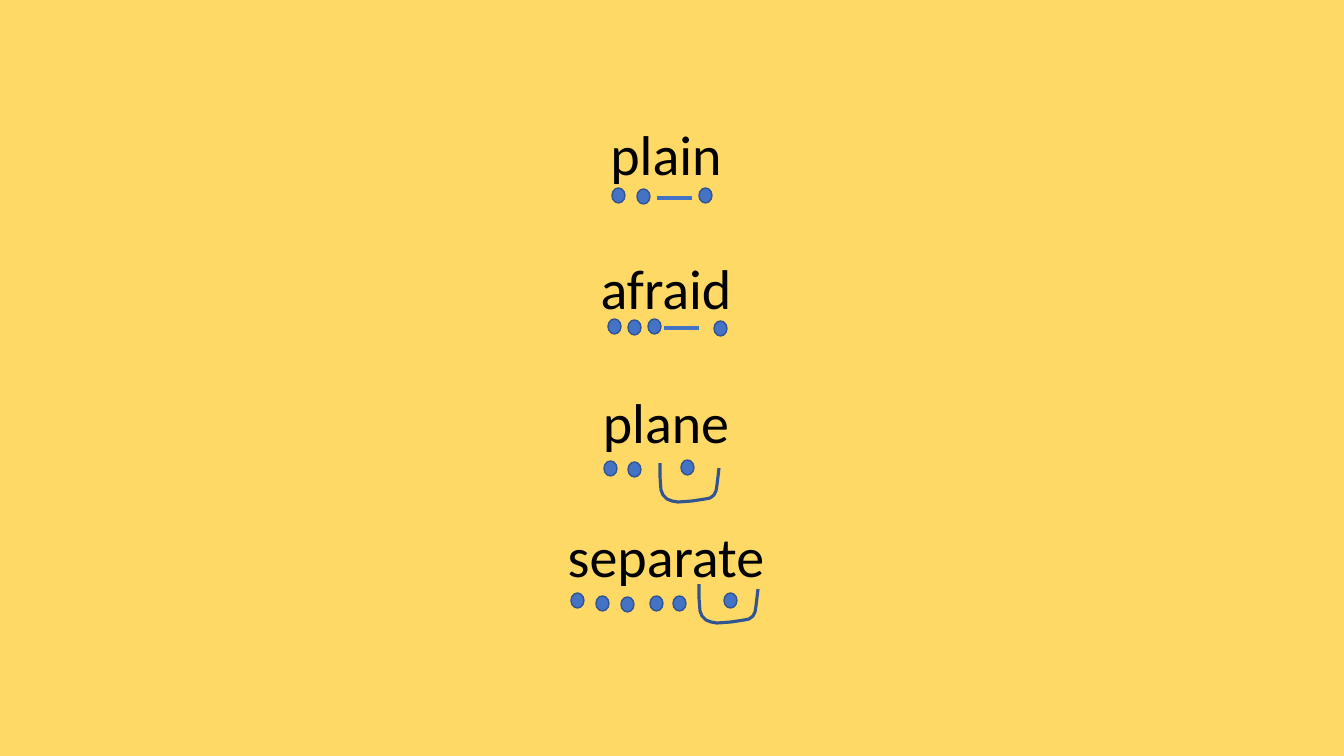
from pptx import Presentation
from pptx.dml.color import RGBColor
from pptx.enum.shapes import MSO_CONNECTOR as CONN, MSO_SHAPE as SHAPE
from pptx.enum.text import MSO_AUTO_SIZE as AUTO, PP_ALIGN as ALIGN
from pptx.oxml.ns import qn
from pptx.util import Pt
from lxml import etree

COLORS = {"background": "FFD966", "text": "000000", "dot": "4472C4", "edge": "325491"}
FONT = "Calibri"
EMU_PER_PX = 12192000 / 1344
SLIDE_SIZE = (1344, 756)
WORD_BOX = (330, 115, 672, 485)
DOT_SIZE = (13, 15)
DASH_LENGTH = 35
LOOP_CURVE = [(0, 14), (1, 27), (3, 32), (7, 36), (12, 38), (18, 39),
              (32, 38), (45, 36), (50, 35), (54, 32), (56, 28), (57, 22), (59, 5)]

WORDS = [
    {"word": "plain", "dots": [(612, 188), (637, 189), (699, 188)], "dash": (657, 198)},
    {"word": "afraid", "dots": [(608, 319), (628, 320), (648, 319), (714, 321)],
     "dash": (664, 328)},
    {"word": "plane", "dots": [(604, 461), (628, 462), (681, 460)], "loop": (660, 463)},
    {"word": "separate", "dots": [(571, 593), (596, 596), (621, 597), (650, 596),
                                  (673, 596), (724, 593)], "loop": (699, 584)},
]


def px(*lengths):
    return [round(n * EMU_PER_PX) for n in lengths]


def rgb(name):
    return RGBColor.from_string(COLORS[name])


def set_line(sp, color, width):
    sp.line.color.rgb = rgb(color)
    sp.line.width = Pt(width)


def add_words(s):
    tf = s.shapes.add_textbox(*px(*WORD_BOX)).text_frame
    tf.word_wrap = True
    tf.auto_size = AUTO.SHAPE_TO_FIT_TEXT
    tf.text = "\n".join(row["word"] for row in WORDS)
    for p in tf.paragraphs:
        p.alignment = ALIGN.CENTER
        p.space_after = Pt(47.5)
        font = p.runs[0].font
        font.name, font.size = FONT, Pt(40)
        font.color.rgb = rgb("text")
    tf.paragraphs[-1].space_after = Pt(0)


def add_dot(s, x, y):
    sp = s.shapes.add_shape(SHAPE.OVAL, *px(x, y, *DOT_SIZE))
    sp.shadow.inherit = False
    sp.fill.solid()
    sp.fill.fore_color.rgb = rgb("dot")
    set_line(sp, "edge", 1)


def add_dash(s, x, y):
    line = s.shapes.add_connector(CONN.STRAIGHT, *px(x, y, x + DASH_LENGTH, y))
    set_line(line, "dot", 2.25)
    etree.SubElement(line._element.spPr, qn("a:effectLst"))


def add_loop(s, x, y):
    builder = s.shapes.build_freeform(*px(x, y))
    builder.add_line_segments([px(x + dx, y + dy) for dx, dy in LOOP_CURVE], close=False)
    sp = builder.convert_to_shape()
    sp.shadow.inherit = False
    sp.fill.background()
    set_line(sp, "edge", 2.25)


def main():
    prs = Presentation()
    prs.slide_width, prs.slide_height = px(*SLIDE_SIZE)
    s = prs.slides.add_slide(prs.slide_layouts[6])
    s.background.fill.solid()
    s.background.fill.fore_color.rgb = rgb("background")
    add_words(s)
    for row in WORDS:
        for dot in row["dots"]:
            add_dot(s, *dot)
        if "dash" in row:
            add_dash(s, *row["dash"])
        if "loop" in row:
            add_loop(s, *row["loop"])
    prs.save("out.pptx")


if __name__ == "__main__":
    main()
